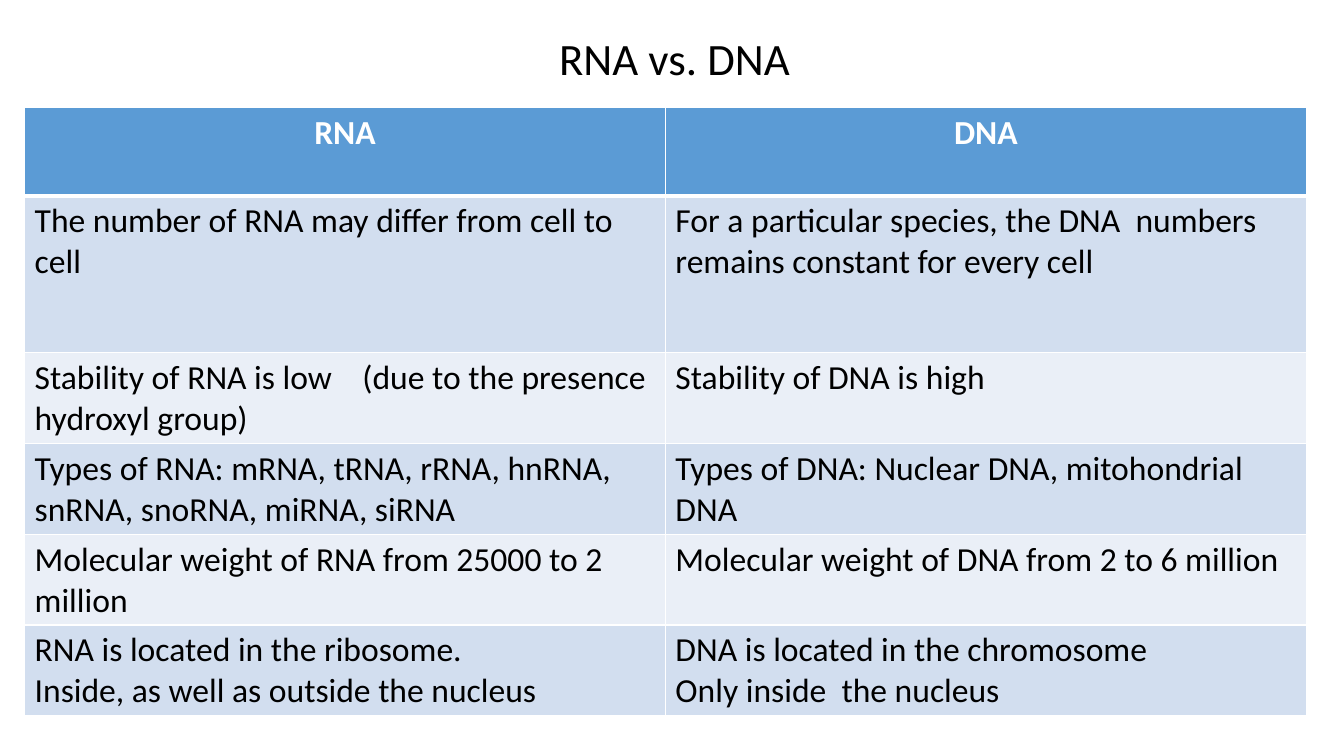
import pptx
import pptx.dml.color
import pptx.enum.text
import pptx.oxml
import pptx.oxml.ns
import pptx.util
from pptx.util import Cm

COLORS = {
    "text": "000000",
    "header": "5B9BD5",
    "header_text": "FFFFFF",
    "band_dark": "D2DEEF",
    "band_light": "EAEFF7",
    "border": "FFFFFF",
}
FONT = "Calibri"
HEADERS = ("RNA", "DNA")
COMPARISON = (
    ("The number of RNA may differ from cell to cell",
     "For a particular species, the DNA  numbers remains constant for every cell"),
    ("Stability of RNA is low\t(due to the presence hydroxyl group)",
     "Stability of DNA is high"),
    ("Types of RNA: mRNA, tRNA, rRNA, hnRNA, snRNA, snoRNA, miRNA, siRNA",
     "Types of DNA: Nuclear DNA, mitohondrial DNA"),
    ("Molecular weight of RNA from 25000 to 2 million",
     "Molecular weight of DNA from 2 to 6 million"),
    ("RNA is located in the ribosome.\nInside, as well as outside the nucleus",
     "DNA is located in the chromosome\nOnly inside  the nucleus"),
)
ROW_HEIGHTS = (Cm(2.24), Cm(3.94)) + (Cm(2.29),) * 4
TAB_STOP = Cm(8.26)


def rgb(name):
    """Return the named colour."""
    return pptx.dml.color.RGBColor.from_string(COLORS[name])


def style_paragraph(paragraph, size, color, bold=False):
    """Set the font of a whole paragraph."""
    font = paragraph.font
    font.name, font.size, font.bold = FONT, pptx.util.Pt(size), bold
    font.color.rgb = rgb(color)


def add_tab_stop(paragraph):
    """Give a paragraph one left tab stop."""
    paragraph._p.get_or_add_pPr().append(pptx.oxml.parse_xml(
        f'<a:tabLst {pptx.oxml.ns.nsdecls("a")}>'
        f'<a:tab pos="{int(TAB_STOP)}" algn="l"/></a:tabLst>'))


def set_borders(cell, top, bottom):
    """Draw the four borders of a cell, with widths in points."""
    properties = cell._tc.get_or_add_tcPr()
    for side, width in (("L", 1), ("R", 1), ("T", top), ("B", bottom)):
        properties.append(pptx.oxml.parse_xml(
            f'<a:ln{side} {pptx.oxml.ns.nsdecls("a")} w="{int(pptx.util.Pt(width))}">'
            f'<a:solidFill><a:srgbClr val="{COLORS["border"]}"/></a:solidFill>'
            f'</a:ln{side}>'))


def add_title(page, left, top, width, height):
    """Place the slide title in its box."""
    box = page.shapes.add_textbox(left, top, width, height)
    frame = box.text_frame
    frame.word_wrap = False
    frame.auto_size = pptx.enum.text.MSO_AUTO_SIZE.SHAPE_TO_FIT_TEXT
    frame.text = "RNA vs. DNA"
    style_paragraph(frame.paragraphs[0], 32, "text")


def fill_cell(cell, text, row):
    """Write and style one cell according to its row."""
    is_header = row == 0
    set_borders(cell, top=3 if row == 1 else 1, bottom=3 if is_header else 1)
    cell.fill.solid()
    band = "band_dark" if row % 2 else "band_light"
    cell.fill.fore_color.rgb = rgb("header" if is_header else band)
    cell.text = text
    for paragraph in cell.text_frame.paragraphs:
        if "\t" in paragraph.text:
            add_tab_stop(paragraph)
        if is_header:
            paragraph.alignment = pptx.enum.text.PP_ALIGN.CENTER
        style_paragraph(paragraph, 24, "header_text" if is_header else "text", is_header)


def add_comparison(page, left, top, width):
    """Place the comparison table with equal columns."""
    rows = (HEADERS,) + COMPARISON
    table = page.shapes.add_table(
        len(rows), len(HEADERS), left, top, width, sum(ROW_HEIGHTS)).table
    for row, (texts, height) in enumerate(zip(rows, ROW_HEIGHTS)):
        table.rows[row].height = height
        for column, text in enumerate(texts):
            fill_cell(table.cell(row, column), text, row)


def main():
    """Build and save the deck."""
    deck = pptx.Presentation()
    deck.slide_width, deck.slide_height = Cm(33.87), Cm(19.05)
    page = deck.slides.add_slide(deck.slide_layouts[6])
    add_title(page, Cm(13.84), Cm(0.64), Cm(6.65), Cm(1.62))
    add_comparison(page, Cm(0.62), Cm(2.7), Cm(32.3))
    deck.save("out.pptx")


if __name__ == "__main__":
    main()
